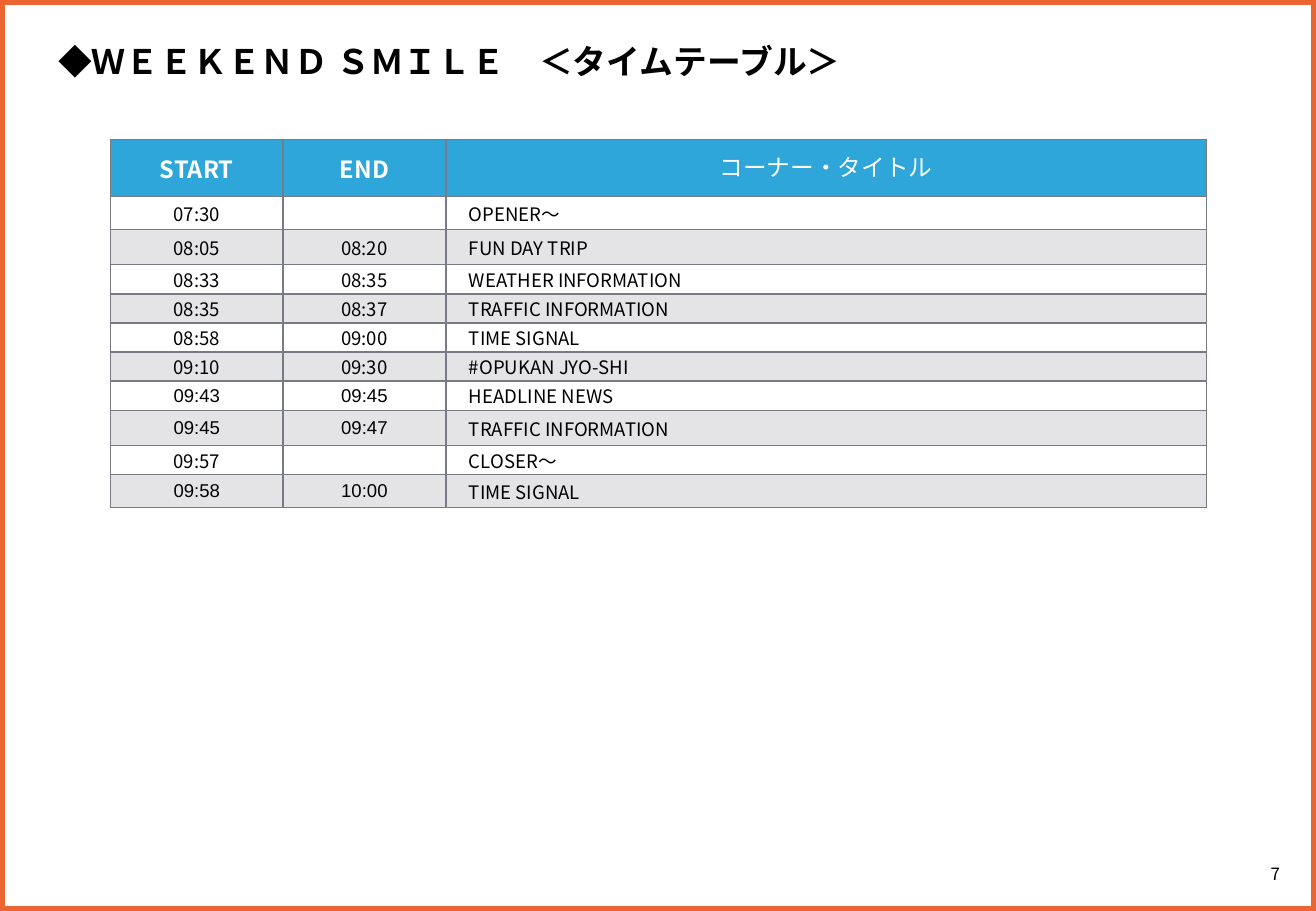
from dataclasses import dataclass

from lxml.etree import SubElement
from pptx import Presentation
from pptx.dml.color import RGBColor
from pptx.enum.shapes import MSO_SHAPE
from pptx.enum.text import MSO_ANCHOR, PP_ALIGN
from pptx.oxml.ns import qn
from pptx.util import Inches, Pt


@dataclass(frozen=True)
class Theme:
    frame: str = "EB6432"
    header: str = "2EA6DA"
    grid: str = "797B84"
    band_opacity: int = 20
    ink: str = "000000"
    white: str = "FFFFFF"
    font: str = "Noto Sans CJK JP"
    plain_font: str = "Arial"
    title_size: int = 20
    header_size: int = 14
    body_size: int = 11
    page_size: int = 10


THEME = Theme()
COLUMN_WIDTHS = (1.42, 1.34, 6.26)
ROW_HEIGHTS = (0.47, 0.27, 0.29, 0.24, 0.24, 0.24, 0.24, 0.24, 0.29, 0.24, 0.27)
TITLE_INDENT = 0.19
HEADINGS = ("START", "END", "コーナー・タイトル")
PROGRAMME = (
    ("07:30", "", "OPENER〜"),
    ("08:05", "08:20", "FUN DAY TRIP"),
    ("08:33", "08:35", "WEATHER INFORMATION"),
    ("08:35", "08:37", "TRAFFIC INFORMATION"),
    ("08:58", "09:00", "TIME SIGNAL"),
    ("09:10", "09:30", "#OPUKAN JYO-SHI"),
    ("09:43", "09:45", "HEADLINE NEWS"),
    ("09:45", "09:47", "TRAFFIC INFORMATION"),
    ("09:57", "", "CLOSER〜"),
    ("09:58", "10:00", "TIME SIGNAL"),
)
PLAIN_TIME_ROWS = (7, 8, 10)


def add_span(para, text, size, color=THEME.ink, name=THEME.font, bold=False):
    """Add a run whose Latin and East Asian typefaces are the same."""
    span = para.add_run()
    span.text = text
    for key, value in {"size": Pt(size), "name": name, "bold": bold}.items():
        setattr(span.font, key, value)
    span.font.color.rgb = RGBColor.from_string(color)
    latin = span.font._element.find(qn("a:latin"))
    east_asian = latin.makeelement(qn("a:ea"), {"typeface": name})
    latin.addnext(east_asian)


def add_frame(page, deck):
    frame = page.shapes.add_shape(
        MSO_SHAPE.RECTANGLE, 0, 0, deck.slide_width, deck.slide_height)
    frame.shadow.inherit = False
    frame.fill.background()
    frame.line.color.rgb = RGBColor.from_string(THEME.frame)
    frame.line.width = Pt(6)


def add_text(page, place, spans, anchor=MSO_ANCHOR.TOP, align=PP_ALIGN.LEFT):
    box = page.shapes.add_textbox(*map(Inches, place))
    frame = box.text_frame
    frame.word_wrap = True
    frame.vertical_anchor = anchor
    para = frame.paragraphs[0]
    para.alignment = align
    for text, style in spans:
        add_span(para, text, **style)


def set_borders(cell):
    properties = cell._tc.get_or_add_tcPr()
    for side in ("lnL", "lnR", "lnT", "lnB"):
        line = SubElement(properties, qn(f"a:{side}"), w=str(Pt(1)))
        fill = SubElement(line, qn("a:solidFill"))
        SubElement(fill, qn("a:srgbClr"), val=THEME.grid)


def fill_cell(cell, color, opacity=100):
    cell.fill.solid()
    cell.fill.fore_color.rgb = RGBColor.from_string(color)
    if opacity < 100:
        tint = cell._tc.tcPr.find(f"{qn('a:solidFill')}/{qn('a:srgbClr')}")
        SubElement(tint, qn("a:alpha"), val=str(opacity * 1000))


def write_cell(cell, text, align, indent, style):
    margins = {"margin_left": Inches(indent), "margin_right": 0,
               "margin_top": 0, "margin_bottom": 0}
    for key, value in margins.items():
        setattr(cell, key, value)
    cell.vertical_anchor = MSO_ANCHOR.MIDDLE
    para = cell.text_frame.paragraphs[0]
    para.alignment = align
    if text:
        add_span(para, text, **style)
    else:
        SubElement(para._p, qn("a:endParaRPr"), sz=str(style["size"] * 100))


def cell_style(row, column):
    if row == 0:
        is_title = column == 2
        return {"size": THEME.header_size, "color": THEME.white, "bold": not is_title,
                "name": THEME.plain_font if is_title else THEME.font}
    plain = row in PLAIN_TIME_ROWS and column < 2
    return {"size": THEME.body_size, "name": THEME.plain_font if plain else THEME.font}


def add_timetable(page):
    rows = (HEADINGS, *PROGRAMME)
    place = (0.91, 1.15, sum(COLUMN_WIDTHS), sum(ROW_HEIGHTS))
    table = page.shapes.add_table(
        len(rows), len(HEADINGS), *map(Inches, place)).table
    table.first_row = table.horz_banding = False
    for column, width in zip(table.columns, COLUMN_WIDTHS):
        column.width = Inches(width)
    for row, height in zip(table.rows, ROW_HEIGHTS):
        row.height = Inches(height)
    for row, texts in enumerate(rows):
        for column, text in enumerate(texts):
            cell = table.cell(row, column)
            is_entry = row > 0 and column == 2
            write_cell(cell, text, PP_ALIGN.LEFT if is_entry else PP_ALIGN.CENTER,
                       TITLE_INDENT if is_entry else 0, cell_style(row, column))
            set_borders(cell)
            if row == 0:
                fill_cell(cell, THEME.header)
            elif row % 2 == 0:
                fill_cell(cell, THEME.grid, THEME.band_opacity)
            else:
                cell.fill.background()


def main():
    deck = Presentation()
    deck.slide_width, deck.slide_height = Inches(10.83), Inches(7.5)
    page = deck.slides.add_slide(deck.slide_layouts[6])
    add_text(page, (10.16, 7.02, 0.67, 0.35), [("7", {"size": THEME.page_size})],
             MSO_ANCHOR.MIDDLE, PP_ALIGN.CENTER)
    add_frame(page, deck)
    add_timetable(page)
    add_text(page, (0.38, 0.29, 8.27, 0.44), [
        ("◆", {"size": THEME.title_size}),
        ("ＷＥＥＫＥＮＤ ＳＭＩＬＥ　＜タイムテーブル＞",
         {"size": THEME.title_size, "bold": True}),
    ])
    deck.save("out.pptx")


if __name__ == "__main__":
    main()
